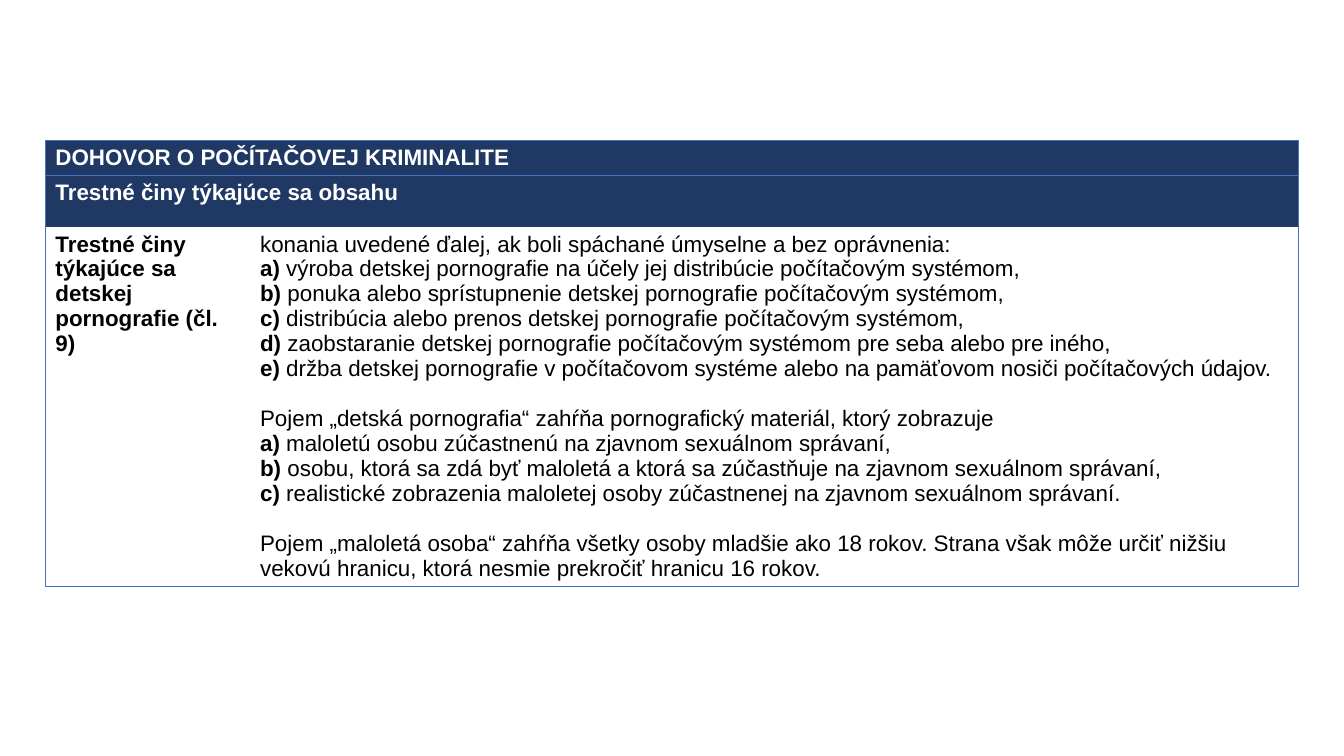
from lxml import etree
from pptx import Presentation
from pptx.dml.color import RGBColor
from pptx.oxml import ns
from pptx.util import Inches, Pt

NAVY = RGBColor(0x20, 0x38, 0x64)
BLUE = RGBColor(0x44, 0x72, 0xC4)
WHITE = RGBColor(0xFF, 0xFF, 0xFF)
BLACK = RGBColor(0x00, 0x00, 0x00)

COLUMN_WIDTHS = [2.03, 10.4]
ROW_HEIGHTS = [0.35, 0.51, 3.56]
HEADINGS = [
    ("DOHOVOR O POČÍTAČOVEJ KRIMINALITE", "LTR"),
    ("Trestné činy týkajúce sa obsahu", "LTRB"),
]
OFFENCE = "Trestné činy týkajúce sa detskej pornografie (čl. 9)"
DEFINITIONS = [
    ("konania uvedené ďalej, ak boli spáchané úmyselne a bez oprávnenia:", [
        "výroba detskej pornografie na účely jej distribúcie počítačovým systémom,",
        "ponuka alebo sprístupnenie detskej pornografie počítačovým systémom,",
        "distribúcia alebo prenos detskej pornografie počítačovým systémom,",
        "zaobstaranie detskej pornografie počítačovým systémom pre seba alebo pre iného,",
        "držba detskej pornografie v počítačovom systéme alebo na pamäťovom nosiči počítačových údajov.",
    ]),
    ("Pojem „detská pornografia“ zahŕňa pornografický materiál, ktorý zobrazuje", [
        "maloletú osobu zúčastnenú na zjavnom sexuálnom správaní,",
        "osobu, ktorá sa zdá byť maloletá a ktorá sa zúčastňuje na zjavnom sexuálnom správaní,",
        "realistické zobrazenia maloletej osoby zúčastnenej na zjavnom sexuálnom správaní.",
    ]),
    ("Pojem „maloletá osoba“ zahŕňa všetky osoby mladšie ako 18 rokov. Strana však môže určiť "
     "nižšiu vekovú hranicu, ktorá nesmie prekročiť hranicu 16 rokov.", []),
]


def add_run(paragraph, content, color=BLACK, bold=False):
    run = paragraph.add_run()
    run.text = content
    run.font.name = "Arial"
    run.font.size = Pt(16)
    run.font.bold = bold
    run.font.color.rgb = color


def set_borders(cell, edges):
    properties = cell._tc.get_or_add_tcPr()
    for position, edge in enumerate("LRTB"):
        line = etree.Element(ns.qn(f"a:ln{edge}"), w=str(Pt(0.5)))
        if edge in edges:
            fill = etree.SubElement(line, ns.qn("a:solidFill"))
            etree.SubElement(fill, ns.qn("a:srgbClr"), val=str(BLUE))
        else:
            etree.SubElement(line, ns.qn("a:noFill"))
        properties.insert(position, line)


def add_offence_table(slide):
    frame = slide.shapes.add_table(
        len(ROW_HEIGHTS), len(COLUMN_WIDTHS), Inches(0.45), Inches(1.39),
        Inches(sum(COLUMN_WIDTHS)), Inches(sum(ROW_HEIGHTS)))
    table = frame.table
    table.first_row = False
    table.horz_banding = False
    for column, width in zip(table.columns, COLUMN_WIDTHS):
        column.width = Inches(width)
    for row, height in zip(table.rows, ROW_HEIGHTS):
        row.height = Inches(height)
    return table


def fill_heading(row_cells, heading, edges):
    for cell in row_cells:
        cell.fill.solid()
        cell.fill.fore_color.rgb = NAVY
        set_borders(cell, edges)
    row_cells[0].merge(row_cells[1])
    add_run(row_cells[0].text_frame.paragraphs[0], heading, WHITE, True)


def fill_definitions(text_frame):
    paragraph = text_frame.paragraphs[0]
    for number, (intro, items) in enumerate(DEFINITIONS):
        if number:
            paragraph = text_frame.add_paragraph()
            paragraph.space_before = Pt(18)
        add_run(paragraph, intro)
        for letter, item in zip("abcde", items):
            paragraph = text_frame.add_paragraph()
            add_run(paragraph, f"{letter}) ", bold=True)
            add_run(paragraph, item)


def main():
    presentation = Presentation()
    presentation.slide_width = Inches(13.33)
    presentation.slide_height = Inches(7.5)
    slide = presentation.slides.add_slide(presentation.slide_layouts[6])
    table = add_offence_table(slide)
    for row, (heading, edges) in enumerate(HEADINGS):
        fill_heading([table.cell(row, 0), table.cell(row, 1)], heading, edges)
    offence, definitions = table.cell(2, 0), table.cell(2, 1)
    for cell, edges in ((offence, "LB"), (definitions, "RB")):
        cell.fill.background()
        set_borders(cell, edges)
    add_run(offence.text_frame.paragraphs[0], OFFENCE, bold=True)
    fill_definitions(definitions.text_frame)
    presentation.save("out.pptx")


if __name__ == "__main__":
    main()
